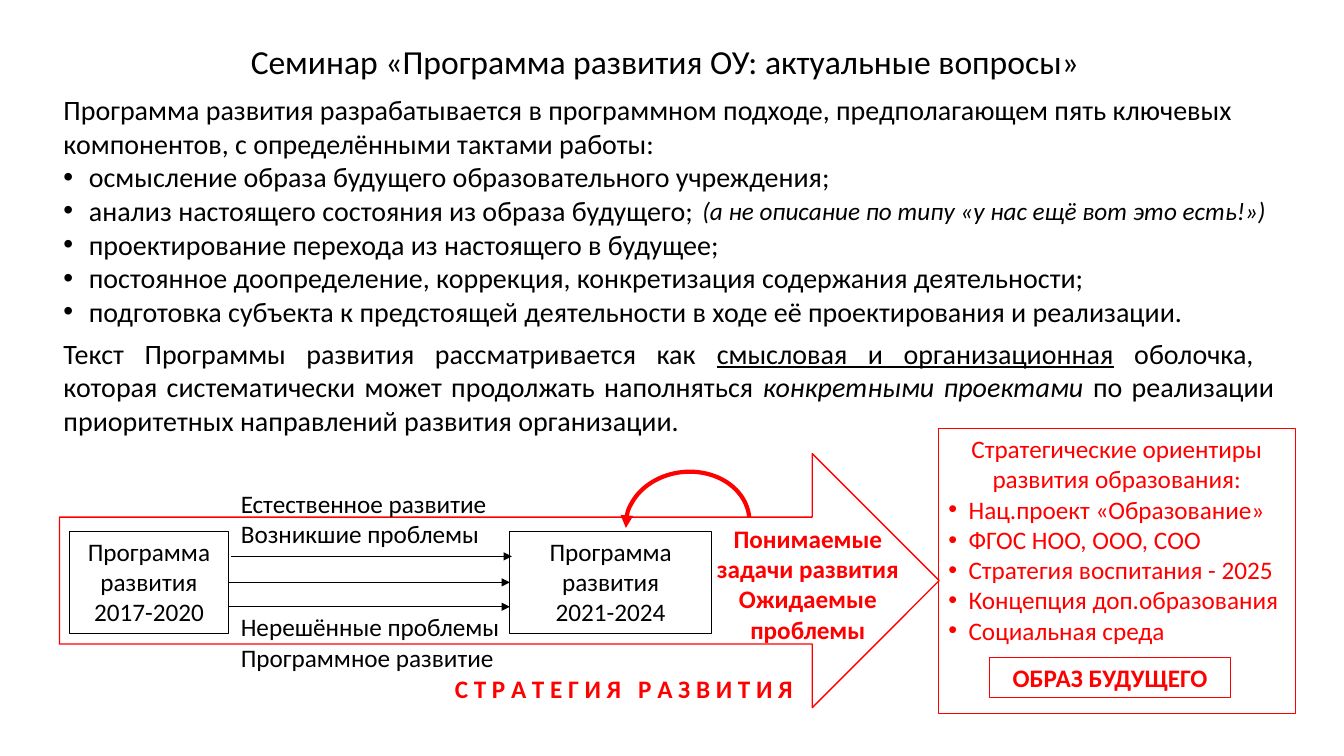
"""Build a slide on the school development programme and its strategy diagram."""
from dataclasses import dataclass
from typing import Optional

from lxml.etree import SubElement
from pptx import Presentation
from pptx.dml.color import RGBColor
from pptx.enum.shapes import MSO_CONNECTOR, MSO_SHAPE
from pptx.enum.text import MSO_ANCHOR, PP_ALIGN
from pptx.oxml.ns import qn
from pptx.util import Cm, Pt

BLACK = RGBColor(0x00, 0x00, 0x00)
RED = RGBColor(0xFF, 0x00, 0x00)
FONT = "Calibri"


@dataclass(frozen=True)
class Area:
    left: float
    top: float
    width: float
    height: float

    def lengths(self):
        return Cm(self.left), Cm(self.top), Cm(self.width), Cm(self.height)


@dataclass(frozen=True)
class Label:
    area: Area
    text: str
    color: RGBColor = BLACK
    size: float = 18
    bold: bool = False
    italic: bool = False
    align: PP_ALIGN = PP_ALIGN.LEFT
    border: Optional[float] = None


@dataclass(frozen=True)
class Phrase:
    text: str
    italic: bool = False
    underline: bool = False


BODY = Label(
    Area(1.35, 2.21, 31.01, 9.27),
    "Программа развития разрабатывается в программном подходе, предполагающем пять "
    "ключевых компонентов, с определёнными тактами работы:\n"
    "осмысление образа будущего образовательного учреждения;\n"
    "анализ настоящего состояния из образа будущего;\n"
    "проектирование перехода из настоящего в будущее;\n"
    "постоянное доопределение, коррекция, конкретизация содержания деятельности;\n"
    "подготовка субъекта к предстоящей деятельности в ходе её проектирования и реализации.",
    size=20,
)
CONCLUSION = [
    Phrase("Текст Программы развития рассматривается как "),
    Phrase("смысловая и организационная", underline=True),
    Phrase(" оболочка, \n"),
    Phrase("которая систематически может продолжать наполняться "),
    Phrase("конкретными проектами", italic=True),
    Phrase(" по реализации приоритетных направлений развития организации."),
]
TITLE = Label(Area(1.35, 1.02, 31.01, 1.19),
              "Семинар «Программа развития ОУ: актуальные вопросы» ",
              size=24, align=PP_ALIGN.CENTER)
GUIDELINES = Label(
    Area(23.65, 10.8, 8.99, 7.19),
    "Стратегические ориентиры развития образования:\n"
    "Нац.проект «Образование»\n"
    "ФГОС НОО, ООО, СОО\n"
    "Стратегия воспитания - 2025\n"
    "Концепция доп.образования\n"
    "Социальная среда",
    RED, border=0.75,
)
PAST_PROGRAMME = Label(Area(1.75, 13.39, 4.01, 2.57), "Программа развития\n2017-2020",
                       align=PP_ALIGN.CENTER, border=0.75)
NEXT_PROGRAMME = Label(Area(12.85, 13.39, 5.08, 2.57), "Программа развития\n2021-2024",
                       align=PP_ALIGN.CENTER, border=0.75)
REMARKS = [
    Label(Area(5.82, 12.17, 6.99, 1.8), "Естественное развитие\nВозникшие проблемы"),
    Label(Area(5.82, 15.29, 7.06, 1.8), "Нерешённые проблемы\nПрограммное развитие"),
    Label(Area(17.58, 13.06, 5.56, 3.33), "Понимаемые задачи развития Ожидаемые проблемы",
          RED, bold=True, align=PP_ALIGN.CENTER),
    Label(Area(24.94, 16.56, 6.07, 1.02), "ОБРАЗ БУДУЩЕГО",
          RED, bold=True, align=PP_ALIGN.CENTER, border=0.75),
    Label(Area(11, 16.84, 9.45, 1.02), " ".join("СТРАТЕГИЯ РАЗВИТИЯ"),
          RED, bold=True, align=PP_ALIGN.CENTER),
    Label(Area(17.45, 4.8, 15.06, 1.02), "(а не описание по типу «у нас ещё вот это есть!»)",
          italic=True),
]
STRATEGY_ARROW = Area(1.5, 11.43, 22.17, 6.4)
FEEDBACK_ARC = Area(15.77, 11.89, 3.12, 2.59)


def style_run(run, label: Label) -> None:
    font = run.font
    font.name, font.size = FONT, Pt(label.size)
    font.bold, font.italic = label.bold, label.italic
    font.color.rgb = label.color


def add_outline(slide, kind: MSO_SHAPE, area: Area, color: RGBColor, width: float):
    shape = slide.shapes.add_shape(kind, *area.lengths())
    shape.shadow.inherit = False
    shape.fill.background()
    shape.line.color.rgb = color
    shape.line.width = Pt(width)
    return shape


def add_label(slide, label: Label):
    if label.border:
        shape = add_outline(slide, MSO_SHAPE.RECTANGLE, label.area, label.color, label.border)
    else:
        shape = slide.shapes.add_textbox(*label.area.lengths())
    frame = shape.text_frame
    frame.word_wrap = True
    frame.vertical_anchor = MSO_ANCHOR.TOP
    frame.text = label.text
    for paragraph in frame.paragraphs:
        paragraph.alignment = label.align
        for run in paragraph.runs:
            style_run(run, label)
    return shape


def add_bullets(paragraphs, indent: float) -> None:
    for paragraph in paragraphs:
        properties = paragraph._p.get_or_add_pPr()
        properties.set("marL", str(Cm(indent)))
        properties.set("indent", str(-Cm(indent)))
        SubElement(properties, qn("a:buFont"), typeface="Arial")
        SubElement(properties, qn("a:buChar"), char="•")


def add_conclusion(frame) -> None:
    paragraph = frame.add_paragraph()
    paragraph.alignment = PP_ALIGN.JUSTIFY
    paragraph.space_before = Pt(6)
    for phrase in CONCLUSION:
        run = paragraph.add_run()
        run.text = phrase.text.rstrip("\n")
        style_run(run, BODY)
        run.font.italic = phrase.italic
        run.font.underline = phrase.underline
        if phrase.text.endswith("\n"):
            paragraph.add_line_break()


def add_transition(slide, left: float, right: float, top: float):
    transition = slide.shapes.add_connector(
        MSO_CONNECTOR.STRAIGHT, Cm(left), Cm(top), Cm(right), Cm(top))
    transition.line.color.rgb = BLACK
    transition.line.width = Pt(0.5)
    SubElement(transition.line._get_or_add_ln(), qn("a:tailEnd"), type="triangle")
    SubElement(transition._element.spPr, qn("a:effectLst"))
    return transition


def main() -> None:
    presentation = Presentation()
    presentation.slide_width, presentation.slide_height = Cm(33.87), Cm(19.05)
    slide = presentation.slides.add_slide(presentation.slide_layouts[6])

    body = add_label(slide, BODY).text_frame
    add_bullets(body.paragraphs[1:], 0.64)
    add_conclusion(body)

    title = add_label(slide, TITLE).text_frame
    title.vertical_anchor = MSO_ANCHOR.MIDDLE
    title.paragraphs[0].line_spacing = 0.9

    add_outline(slide, MSO_SHAPE.RIGHT_ARROW, STRATEGY_ARROW, RED, 1)
    guidelines = add_label(slide, GUIDELINES).text_frame
    guidelines.paragraphs[0].alignment = PP_ALIGN.CENTER
    add_bullets(guidelines.paragraphs[1:], 0.51)

    past = add_label(slide, PAST_PROGRAMME)
    following = add_label(slide, NEXT_PROGRAMME)
    for remark in REMARKS:
        add_label(slide, remark)

    feedback = add_outline(slide, MSO_SHAPE.ARC, FEEDBACK_ARC, RED, 3)
    feedback.adjustments[0], feedback.adjustments[1] = 108.62, 0
    feedback.rotation = 354.5
    SubElement(feedback.line._get_or_add_ln(), qn("a:headEnd"), type="triangle")

    add_transition(slide, 5.82, 12.9, 14.02)
    middle = add_transition(slide, 5.76, 12.85, 14.67)
    middle.begin_connect(past, 3)
    middle.end_connect(following, 1)
    add_transition(slide, 5.76, 12.85, 15.29)

    presentation.save("out.pptx")


if __name__ == "__main__":
    main()
